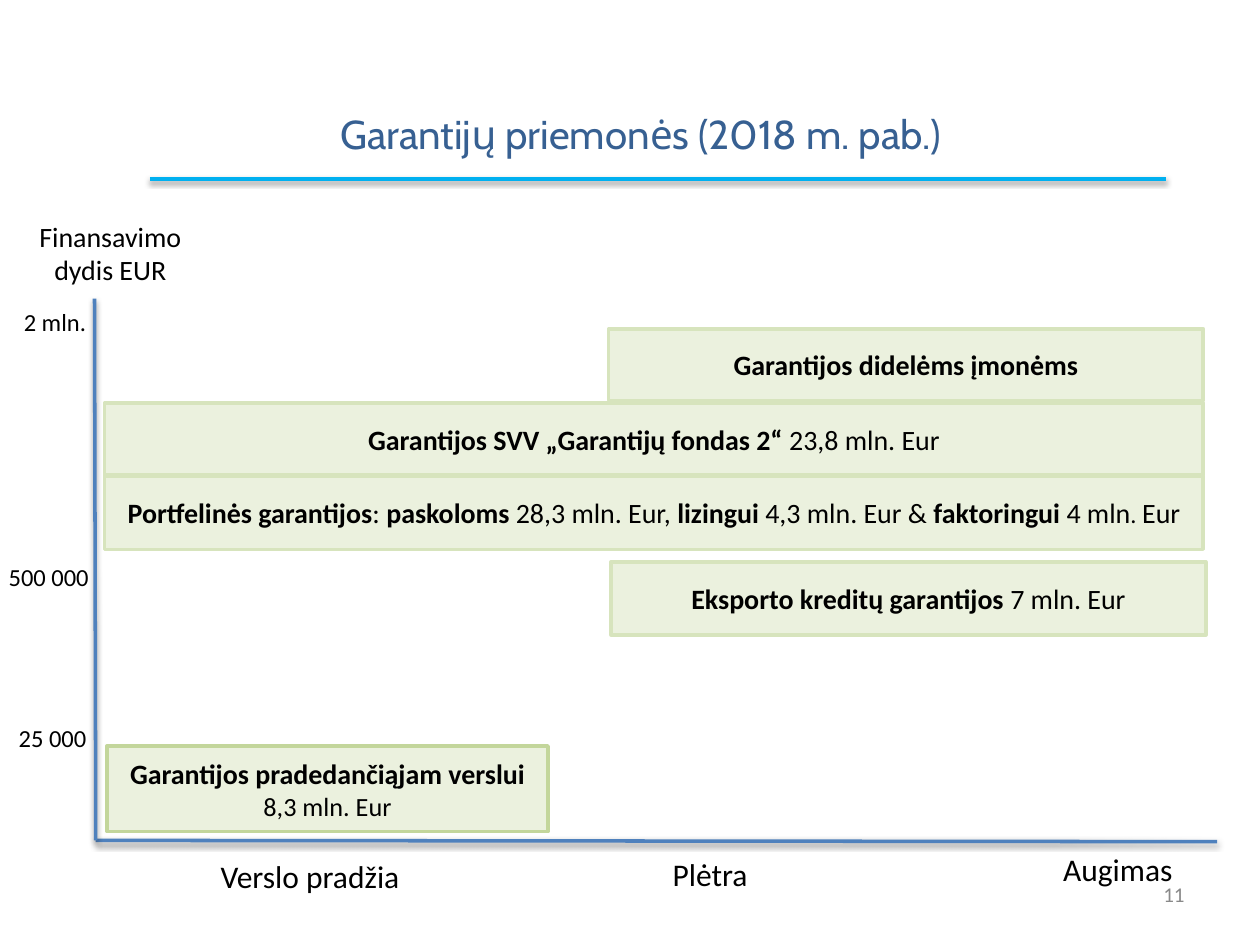
from lxml import etree
from pptx import Presentation
from pptx.dml.color import RGBColor
from pptx.enum.shapes import MSO_CONNECTOR, MSO_SHAPE
from pptx.enum.text import MSO_ANCHOR, MSO_AUTO_SIZE, PP_ALIGN
from pptx.oxml.ns import qn
from pptx.util import Inches, Pt

LEFT, CENTER, RIGHT = PP_ALIGN.LEFT, PP_ALIGN.CENTER, PP_ALIGN.RIGHT
TOP, MIDDLE = MSO_ANCHOR.TOP, MSO_ANCHOR.MIDDLE
RECTANGLE, STRAIGHT = MSO_SHAPE.RECTANGLE, MSO_CONNECTOR.STRAIGHT
NO_AUTOFIT = MSO_AUTO_SIZE.NONE
TITLE_ONLY = 5

COLORS = {
    "title": "376092",
    "rule": "00B0F0",
    "axis": "4F81BD",
    "bar": "EBF1DE",
    "border": "D7E4BD",
    "strong_border": "C3D69B",
    "text": "000000",
    "number": "898989",
}


def rgb(name):
    return RGBColor.from_string(COLORS[name])


class GuaranteeSlide:
    """Holds the text style and the slide being filled."""

    body_font, title_font = "Calibri", "Cabin"
    line_width = Pt(2)

    def __init__(self, presentation):
        self.slide = presentation.slides.add_slide(
            presentation.slide_layouts[TITLE_ONLY])

    def add_runs(self, paragraph, runs, align, color="text", font=None):
        """Add (text, size, bold) runs to a paragraph."""
        paragraph.alignment = align
        for text, size, bold in runs:
            run = paragraph.add_run()
            run.text = text
            run.font.name = font or self.body_font
            run.font.size = Pt(size)
            run.font.bold = bold
            run.font.color.rgb = rgb(color)

    def title(self, text, box, size):
        heading = self.slide.shapes.title
        heading.left, heading.top, heading.width, heading.height = map(Inches, box)
        frame = heading.text_frame
        frame.auto_size = NO_AUTOFIT
        frame.vertical_anchor = MIDDLE
        self.add_runs(frame.paragraphs[0], [(text, size, False)], CENTER,
                      "title", self.title_font)

    def label(self, text, box, size, align=LEFT, color="text", wrap=True):
        frame = self.slide.shapes.add_textbox(*map(Inches, box)).text_frame
        frame.word_wrap = wrap
        frame.vertical_anchor = TOP
        self.add_runs(frame.paragraphs[0], [(text, size, False)], align, color)

    def bar(self, box, lines, border="border"):
        bar = self.slide.shapes.add_shape(RECTANGLE, *map(Inches, box))
        bar.shadow.inherit = False
        bar.fill.solid()
        bar.fill.fore_color.rgb = rgb("bar")
        bar.line.color.rgb = rgb(border)
        bar.line.width = self.line_width
        frame = bar.text_frame
        frame.word_wrap = True
        frame.vertical_anchor = MIDDLE
        for index, runs in enumerate(lines):
            paragraph = frame.add_paragraph() if index else frame.paragraphs[0]
            self.add_runs(paragraph, runs, CENTER)

    def line(self, start, end, color):
        line = self.slide.shapes.add_connector(
            STRAIGHT, *map(Inches, (*start, *end)))
        line.line.color.rgb = rgb(color)
        line.line.width = self.line_width
        # Soft shadow straight below the line
        effects = etree.SubElement(line._element.spPr, qn("a:effectLst"))
        shadow = etree.SubElement(
            effects, qn("a:outerShdw"), blurRad=str(Pt(3.1)),
            dist=str(Pt(1.6)), dir="5400000", rotWithShape="0")
        tint = etree.SubElement(shadow, qn("a:srgbClr"), val=COLORS["text"])
        etree.SubElement(tint, qn("a:alpha"), val="38000")


def main():
    presentation = Presentation()
    presentation.slide_width = Inches(10)
    presentation.slide_height = Inches(7.5)
    page = GuaranteeSlide(presentation)

    # Title, rule and page number
    page.title("Garantijų priemonės (2018 m. pab.)", (0.09, 0.45, 10, 1.21), 23)
    page.line((1.19, 1.42), (9.25, 1.42), "rule")
    page.label("11", (7.17, 6.95, 2.33, 0.4), 12, RIGHT, "number")

    # Axes
    origin = (0.76, 6.67)
    page.line(origin, (9.66, 6.68), "axis")
    page.line((0.75, 2.37), origin, "axis")

    # Business stages on the horizontal axis
    for stage, left, top, width, align in (
        ("Verslo pradžia", 0.82, 6.75, 3.28, CENTER),
        ("Plėtra", 5.24, 6.74, 1.63, LEFT),
        ("Augimas", 8.34, 6.7, 1.63, LEFT),
    ):
        page.label(stage, (left, top, width, 0.4), 18, align)

    # Financing amounts on the vertical axis
    page.label("Finansavimo dydis EUR", (0.15, 1.69, 1.45, 0.64), 16, CENTER)
    for amount, left, top, width in (
        ("2 mln.", 0.09, 2.39, 0.72),
        ("500 000", -0.03, 4.41, 0.84),
        ("25 000", 0.05, 5.69, 0.84),
    ):
        page.label(amount, (left, top, width, 0.34), 14, wrap=False)

    # Guarantee measures
    page.bar((0.83, 3.78, 8.72, 0.58), [[
        ("Portfelinės garantijos", 16, True), (": ", 16, False),
        ("paskoloms", 16, True), (" 28,3 mln. Eur, ", 16, False),
        ("lizingui", 16, True), (" 4,3 mln. Eur & ", 16, False),
        ("faktoringui", 16, True), (" 4 mln", 16, False),
        (". ", 14, False), ("Eur", 16, False),
    ]])
    page.bar((0.83, 3.2, 8.72, 0.57), [[
        ("Garantijos SVV „Garantijų fondas 2“ ", 16, True),
        ("23,8 mln. Eur", 16, False),
    ]])
    page.bar((0.85, 5.92, 3.5, 0.68), [
        [("Garantijos pradedančiąjam verslui", 16, True)],
        [("8,3 mln. Eur", 15, False)],
    ], "strong_border")
    page.bar((4.85, 4.46, 4.72, 0.58), [[
        ("Eksporto kreditų garantijos ", 16, True),
        ("7 mln. Eur", 16, False),
    ]])
    page.bar((4.83, 2.61, 4.72, 0.57), [
        [("Garantijos didelėms įmonėms", 16, True)],
    ])

    presentation.save("out.pptx")


if __name__ == "__main__":
    main()
